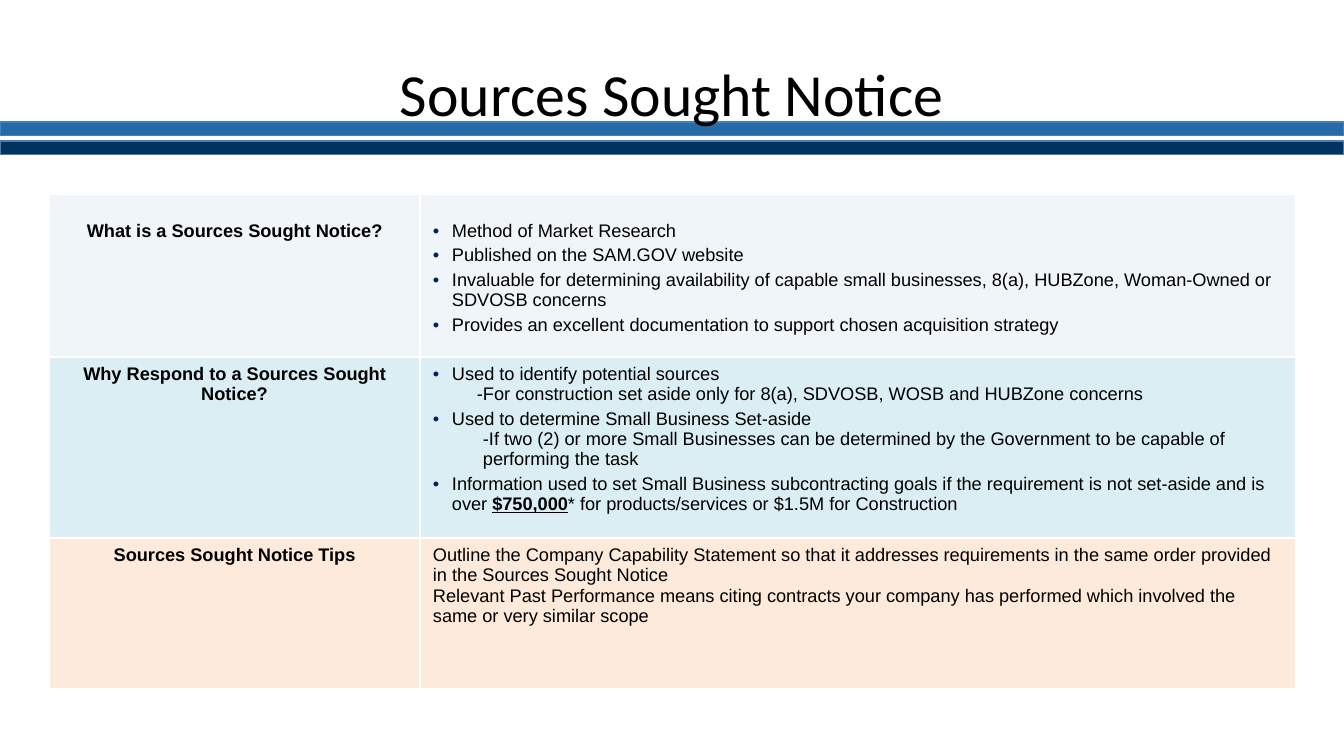
import pptx
import pptx.util
import pptx.dml.color
import pptx.enum.shapes
import pptx.enum.text
import pptx.oxml
import pptx.oxml.ns
import lxml.etree

RGBColor = pptx.dml.color.RGBColor
ALIGN = pptx.enum.text.PP_ALIGN
ANCHOR = pptx.enum.text.MSO_ANCHOR

EMU_PER_PX = 914400 / 100.8
BLACK = RGBColor(0x00, 0x00, 0x00)
WHITE = RGBColor(0xFF, 0xFF, 0xFF)
BLUE = RGBColor(0x26, 0x6B, 0xA6)
NAVY = RGBColor(0x00, 0x34, 0x5E)
BAR_LINE = RGBColor(0x4A, 0x7D, 0xBA)
BULLET = RGBColor(0x00, 0x20, 0x60)
PALE_GREY = RGBColor(0xF0, 0xF5, 0xFA)
PALE_BLUE = RGBColor(0xDB, 0xEE, 0xF4)
PALE_ORANGE = RGBColor(0xFD, 0xEA, 0xDA)

TITLE = "Sources Sought Notice"
COLUMNS = [371, 876]
HEADER_HEIGHT = 36
PADDING_X, PADDING_Y = 13, 7
BULLET_INDENT = 19

# Each row: height, fill, top padding, heading, and items of (text, indent, bulleted, space after)
ROWS = [
    (164, PALE_GREY, 28, "What is a Sources Sought Notice?", [
        ("Method of Market Research", BULLET_INDENT, True, 3),
        ("Published on the SAM.GOV website", BULLET_INDENT, True, 3),
        ("Invaluable for determining availability of capable small businesses, 8(a), "
         "HUBZone, Woman-Owned or SDVOSB concerns", BULLET_INDENT, True, 3),
        ("Provides an excellent documentation to support chosen acquisition strategy",
         BULLET_INDENT, True, 3),
    ]),
    (181, PALE_BLUE, PADDING_Y, "Why Respond to a Sources Sought Notice?", [
        ("Used to identify potential sources", BULLET_INDENT, True, 0),
        ("-For construction set aside only for 8(a), SDVOSB, WOSB and HUBZone concerns",
         44, False, 3),
        ("Used to determine Small Business Set-aside", BULLET_INDENT, True, 0),
        ("-If two (2) or more Small Businesses can be determined by the Government to be "
         "capable of performing the task", 50, False, 3),
        ("Information used to set Small Business subcontracting goals if the requirement is "
         "not set-aside and is over |$750,000|* for products/services or $1.5M for Construction",
         BULLET_INDENT, True, 0),
    ]),
    (151, PALE_ORANGE, PADDING_Y, "Sources Sought Notice Tips", [
        ("Outline the Company Capability Statement so that it addresses requirements in the "
         "same order provided in the Sources Sought Notice", 0, False, 0),
        ("Relevant Past Performance means citing contracts your company has performed which "
         "involved the same or very similar scope", 0, False, 0),
    ]),
]


def px(length):
    """Turn a length in px into EMU."""
    return pptx.util.Emu(round(length * EMU_PER_PX))


def set_font(font, name, size, bold=False):
    """Give a font its face, size and weight in black."""
    font.name, font.size, font.bold = name, pptx.util.Pt(size), bold
    font.color.rgb = BLACK


def set_indent(paragraph, indent, bulleted):
    """Indent a paragraph and hang a bullet in front of it if wanted."""
    properties = paragraph._p.get_or_add_pPr()
    properties.set("marL", str(px(indent)))
    properties.set("indent", str(-px(BULLET_INDENT) if bulleted else 0))
    if bulleted:
        color = lxml.etree.SubElement(properties, pptx.oxml.ns.qn("a:buClr"))
        lxml.etree.SubElement(color, pptx.oxml.ns.qn("a:srgbClr"), val=str(BULLET))
        lxml.etree.SubElement(properties, pptx.oxml.ns.qn("a:buFont"), typeface="Arial")
        lxml.etree.SubElement(properties, pptx.oxml.ns.qn("a:buChar"), char="•")


def style_cell(cell, fill, top=0, side=0, bottom=0, bottom_line=1):
    """Set the borders, fill and margins of a cell."""
    properties = cell._tc.get_or_add_tcPr()
    for edge, width in (("L", 1), ("R", 1), ("T", 1), ("B", bottom_line)):
        line = lxml.etree.SubElement(properties, pptx.oxml.ns.qn(f"a:ln{edge}"),
                                     w=str(pptx.util.Pt(width)))
        solid = lxml.etree.SubElement(line, pptx.oxml.ns.qn("a:solidFill"))
        lxml.etree.SubElement(solid, pptx.oxml.ns.qn("a:srgbClr"), val=str(WHITE))
    cell.fill.solid()
    cell.fill.fore_color.rgb = fill
    cell.margin_left = cell.margin_right = px(side)
    cell.margin_top, cell.margin_bottom = px(top), px(bottom)


def add_bars(slide, left, top, width, height):
    """Draw the two title bars at the top and bottom of the box."""
    thickness = 14
    for color, bar_top in ((BLUE, top), (NAVY, top + height - thickness)):
        bar = slide.shapes.add_shape(pptx.enum.shapes.MSO_SHAPE.RECTANGLE,
                                     px(left), px(bar_top), px(width), px(thickness))
        bar.shadow.inherit = False
        bar.fill.solid()
        bar.fill.fore_color.rgb = color
        bar.line.color.rgb = BAR_LINE
        bar.line.width = pptx.util.Pt(0.75)


def add_title(slide, left, top, width, height):
    """Write the slide title in the middle of the box."""
    frame = slide.shapes.add_textbox(px(left), px(top), px(width), px(height)).text_frame
    frame.word_wrap = True
    frame.vertical_anchor = ANCHOR.MIDDLE
    paragraph = frame.paragraphs[0]
    paragraph.text = TITLE
    paragraph.alignment = ALIGN.CENTER
    set_font(paragraph.font, "Calibri", 42.7)


def fill_items(frame, items):
    """Write the items of a row, with text between bars bold and underlined."""
    for index, (text, indent, bulleted, space_after) in enumerate(items):
        paragraph = frame.add_paragraph() if index else frame.paragraphs[0]
        set_indent(paragraph, indent, bulleted)
        paragraph.space_after = pptx.util.Pt(space_after)
        set_font(paragraph.font, "Arial", 13)
        for part, words in enumerate(text.split("|")):
            run = paragraph.add_run()
            run.text = words
            if part % 2:
                run.font.bold = run.font.underline = True


def add_notice_table(slide, left, top):
    """Build the table of questions and answers from its top left corner."""
    heights = [HEADER_HEIGHT] + [row[0] for row in ROWS]
    table = slide.shapes.add_table(len(heights), len(COLUMNS), px(left), px(top),
                                   px(sum(COLUMNS)), px(sum(heights))).table
    table.first_row = table.horz_banding = False
    for column, width in zip(table.columns, COLUMNS):
        column.width = px(width)
    for row, height in zip(table.rows, heights):
        row.height = px(height)
    table.cell(0, 0).merge(table.cell(0, 1))
    for column in range(len(COLUMNS)):
        style_cell(table.cell(0, column), WHITE, bottom_line=3)
    for index, (height, fill, padding, heading, items) in enumerate(ROWS, start=1):
        for column in range(len(COLUMNS)):
            style_cell(table.cell(index, column), fill, padding, PADDING_X, PADDING_Y)
        paragraph = table.cell(index, 0).text_frame.paragraphs[0]
        paragraph.text = heading
        paragraph.alignment = ALIGN.CENTER
        set_font(paragraph.font, "Arial", 13, bold=True)
        fill_items(table.cell(index, 1).text_frame, items)


def main():
    """Build the slide and save it."""
    presentation = pptx.Presentation()
    presentation.slide_width, presentation.slide_height = px(1344), px(756)
    slide = presentation.slides.add_slide(presentation.slide_layouts[6])
    add_bars(slide, 0, 122, 1344, 33)
    add_title(slide, 67, 30, 1210, 126)
    add_notice_table(slide, 49, 157)
    presentation.save("out.pptx")


if __name__ == "__main__":
    main()
